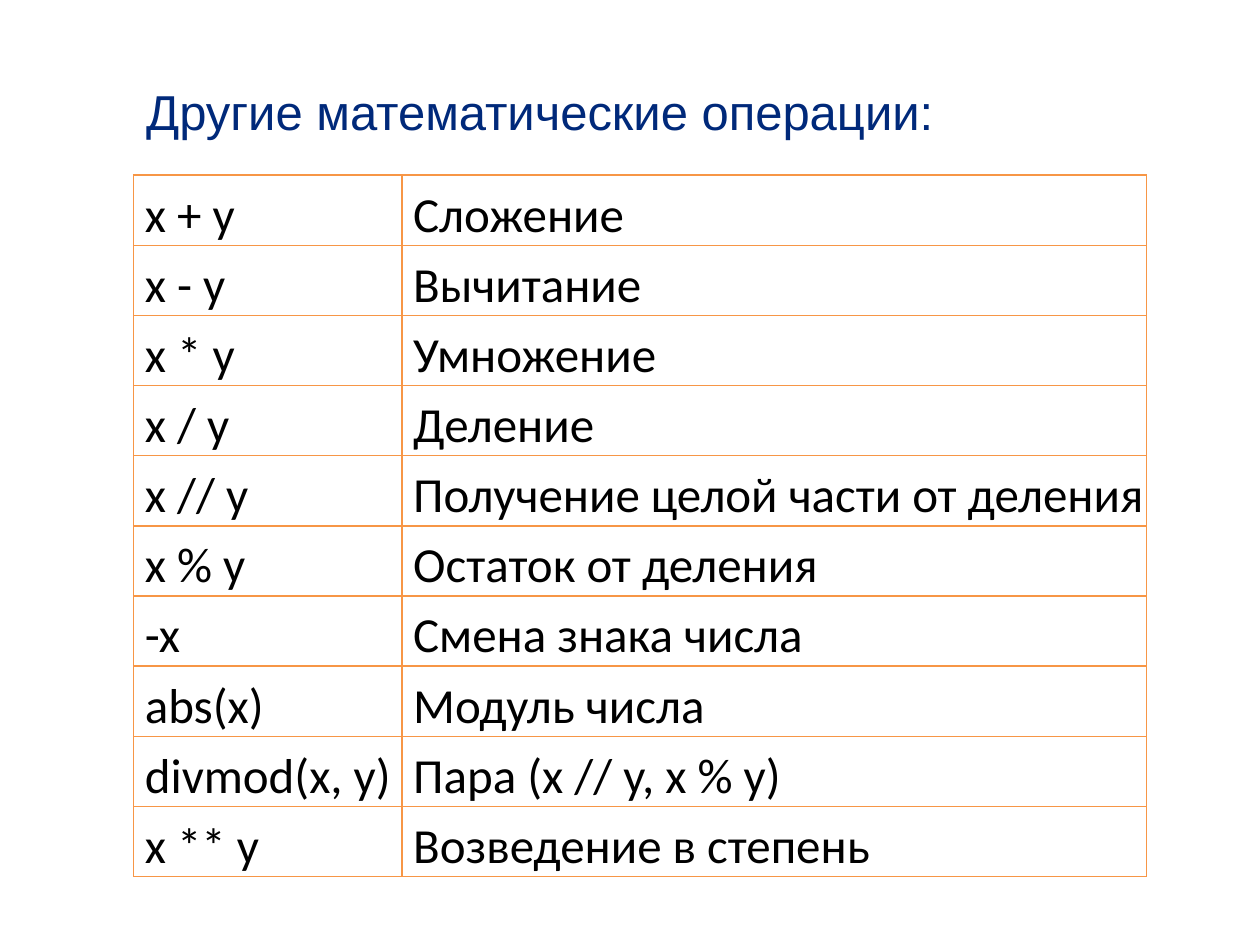
from lxml.etree import SubElement
from pptx import Presentation
from pptx.dml.color import RGBColor
from pptx.enum.text import MSO_ANCHOR, MSO_AUTO_SIZE, PP_ALIGN
from pptx.oxml.ns import qn
from pptx.util import Inches, Pt

NAVY = RGBColor(0x00, 0x29, 0x7A)
BLACK = RGBColor(0x00, 0x00, 0x00)
ORANGE = RGBColor(0xF7, 0x96, 0x46)

OPERATIONS = [
    ("x + y", "Сложение"),
    ("x - y", "Вычитание"),
    ("x * y", "Умножение"),
    ("x / y", "Деление"),
    ("x // y", "Получение целой части от деления"),
    ("x % y", "Остаток от деления"),
    ("-x", "Смена знака числа"),
    ("abs(x)", "Модуль числа"),
    ("divmod(x, y)", "Пара (x // y, x % y)"),
    ("x ** y", "Возведение в степень"),
]


class SlideBuilder:
    size = Pt(28)
    title_font = "Arial"
    table_font = "Calibri"

    def __init__(self, slide):
        self.slide = slide

    def run(self, p, text, font, color):
        r = p.add_run()
        r.text = text
        r.font.name = font
        r.font.size = self.size
        r.font.color.rgb = color

    def title(self, text, left, top, width, height):
        sp = self.slide.shapes.title
        sp.left, sp.top = Inches(left), Inches(top)
        sp.width, sp.height = Inches(width), Inches(height)
        tf = sp.text_frame
        tf.word_wrap = True
        tf.auto_size = MSO_AUTO_SIZE.SHAPE_TO_FIT_TEXT
        tf.vertical_anchor = MSO_ANCHOR.TOP
        p = tf.paragraphs[0]
        p.alignment = PP_ALIGN.LEFT
        self.run(p, text, self.title_font, NAVY)

    def borders(self, cell):
        tc_pr = cell._tc.get_or_add_tcPr()
        for i, side in enumerate(("lnL", "lnR", "lnT", "lnB")):
            ln = SubElement(tc_pr, qn(f"a:{side}"), w=str(Pt(1)))
            fill = SubElement(ln, qn("a:solidFill"))
            SubElement(fill, qn("a:srgbClr"), val=str(ORANGE))
            tc_pr.insert(i, ln)

    def cell(self, cell, text):
        cell.fill.background()
        self.borders(cell)
        cell.vertical_anchor = MSO_ANCHOR.MIDDLE
        cell.margin_left = cell.margin_right = Inches(0.01)
        cell.margin_top = cell.margin_bottom = Inches(0.01)
        p = cell.text_frame.paragraphs[0]
        p.line_spacing = 1.15
        p_pr = p._p.get_or_add_pPr()
        p_pr.set("marL", str(Inches(0.08)))
        p_pr.set("indent", "0")
        self.run(p, text, self.table_font, BLACK)

    def table(self, rows, left, top, col_widths, row_height):
        frame = self.slide.shapes.add_table(
            len(rows), len(col_widths), Inches(left), Inches(top),
            Inches(sum(col_widths)), Inches(row_height * len(rows)))
        table = frame.table
        table.first_row = False
        table.horz_banding = False
        for column, width in zip(table.columns, col_widths):
            column.width = Inches(width)
        for row, texts in zip(table.rows, rows):
            row.height = Inches(row_height)
            for cell, text in zip(row.cells, texts):
                self.cell(cell, text)


def main():
    prs = Presentation()
    prs.slide_width, prs.slide_height = Inches(10), Inches(7.5)
    s = SlideBuilder(prs.slides.add_slide(prs.slide_layouts[5]))
    s.table(OPERATIONS, 1.06, 1.39, (2.13, 5.91), 0.48)
    s.title("Другие математические операции:", 1.06, 0.6, 7.48, 0.57)
    prs.save("out.pptx")


if __name__ == "__main__":
    main()
